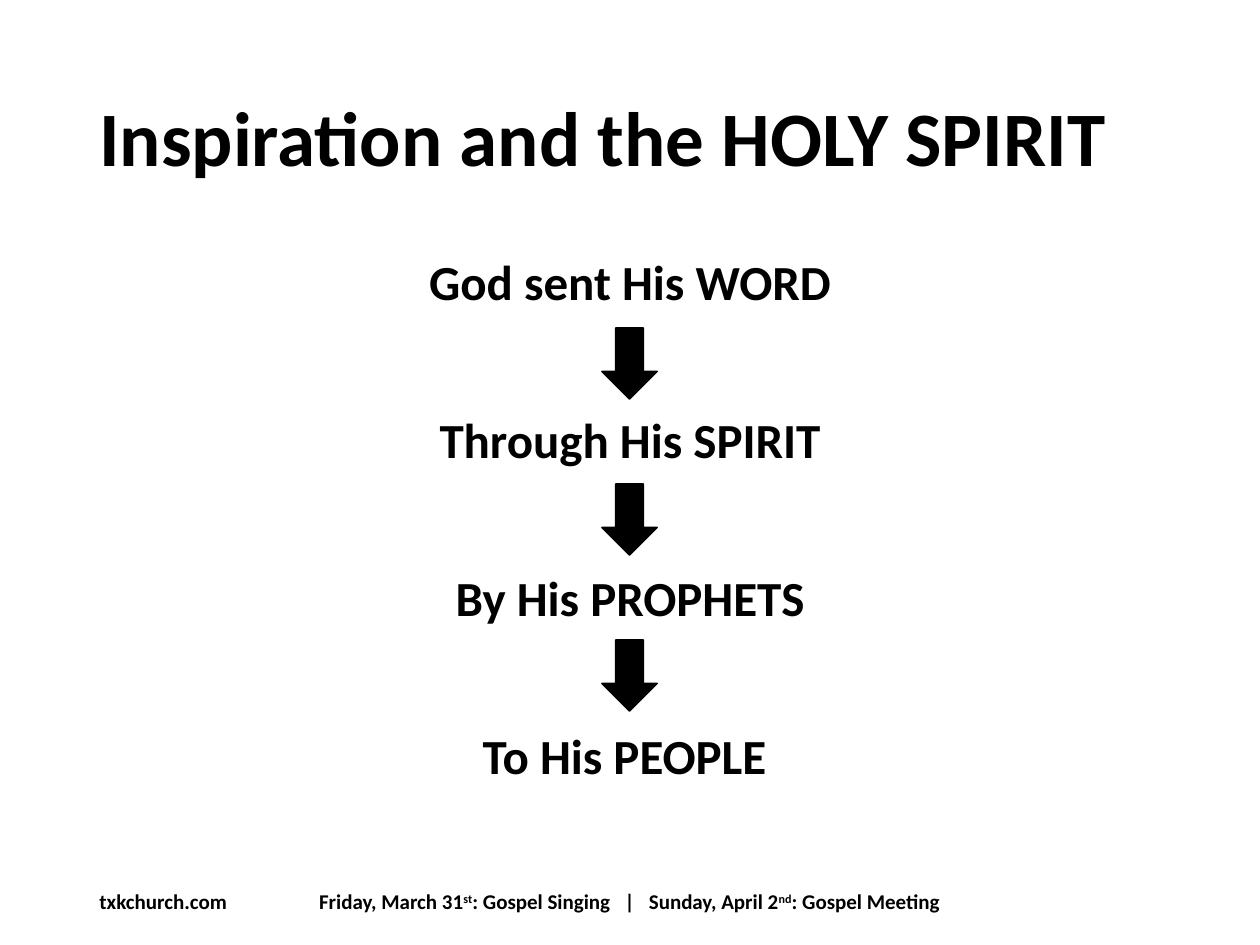
from dataclasses import dataclass

from pptx import Presentation
from pptx.dml.color import RGBColor
from pptx.enum.shapes import MSO_SHAPE as Shape
from pptx.enum.text import MSO_ANCHOR as Anchor, PP_ALIGN as Align
from pptx.util import Pt

EMU_PER_PX = 914400 / 126


@dataclass(frozen=True)
class Theme:
    font: str = "Calibri"
    ink: RGBColor = RGBColor(0, 0, 0)
    paper: RGBColor = RGBColor(255, 255, 255)
    title_size: int = 44
    step_size: int = 28
    footer_size: int = 12


THEME = Theme()

STEPS = ["God sent His WORD", "Through His SPIRIT", "By His PROPHETS", "To His PEOPLE "]
STEP_GAP = 60  # points between steps
ARROW_TOP, ARROW_PITCH = 328, 156

# Run attributes: raised ordinals and wide spaces around the divider
RAISED = {"baseline": "30000"}
WIDE = {"spc": "540"}
EVENTS = [
    ("Friday, March 31", {}), ("st", RAISED), (": Gospel Singing", {}),
    (" ", WIDE), ("|", {}), (" ", WIDE),
    ("Sunday, April 2", {}), ("nd", RAISED), (": Gospel Meeting", {}),
]


def px(value):
    return round(value * EMU_PER_PX)


def add_text(slide, box, paragraphs, size, align=Align.LEFT, anchor=Anchor.MIDDLE,
             line_spacing=1.0, gap=0):
    """Add a text box; each paragraph is a list of (text, run attributes)."""
    frame = slide.shapes.add_textbox(*map(px, box)).text_frame
    frame.word_wrap = True
    frame.vertical_anchor = anchor
    for index, runs in enumerate(paragraphs):
        paragraph = frame.add_paragraph() if index else frame.paragraphs[0]
        paragraph.alignment = align
        paragraph.line_spacing = line_spacing
        paragraph.space_before = Pt(gap if index else 0)
        font = paragraph.font
        font.name, font.size, font.bold = THEME.font, Pt(size), True
        font.color.rgb = THEME.ink
        for text, attributes in runs:
            run = paragraph.add_run()
            run.text = text
            for name, value in attributes.items():
                run._r.get_or_add_rPr().set(name, value)


def add_down_arrow(slide, top):
    arrow = slide.shapes.add_shape(Shape.DOWN_ARROW, px(602), px(top), px(55), px(71))
    arrow.shadow.inherit = False
    arrow.fill.solid()
    arrow.fill.fore_color.rgb = THEME.ink
    arrow.line.color.rgb = THEME.ink
    arrow.line.width = Pt(1)


def main():
    presentation = Presentation()
    presentation.slide_width, presentation.slide_height = px(1260), px(945)
    slide = presentation.slides.add_slide(presentation.slide_layouts[6])
    slide.background.fill.solid()
    slide.background.fill.fore_color.rgb = THEME.paper

    # Title
    add_text(slide, (87, 50, 1101, 183), [[("Inspiration and the HOLY SPIRIT", {})]],
             THEME.title_size, line_spacing=0.9)

    # Chain of steps
    add_text(slide, (87, 252, 1086, 600), [[(step, {})] for step in STEPS],
             THEME.step_size, Align.CENTER, Anchor.TOP, line_spacing=0.9, gap=STEP_GAP)

    # Footer
    add_text(slide, (87, 876, 284, 50), [[("txkchurch.com", {})]], THEME.footer_size)
    add_text(slide, (247, 876, 765, 50), [EVENTS], THEME.footer_size, Align.CENTER)

    # Arrows between the steps
    for index in range(len(STEPS) - 1):
        add_down_arrow(slide, ARROW_TOP + index * ARROW_PITCH)

    presentation.save("out.pptx")


if __name__ == "__main__":
    main()
